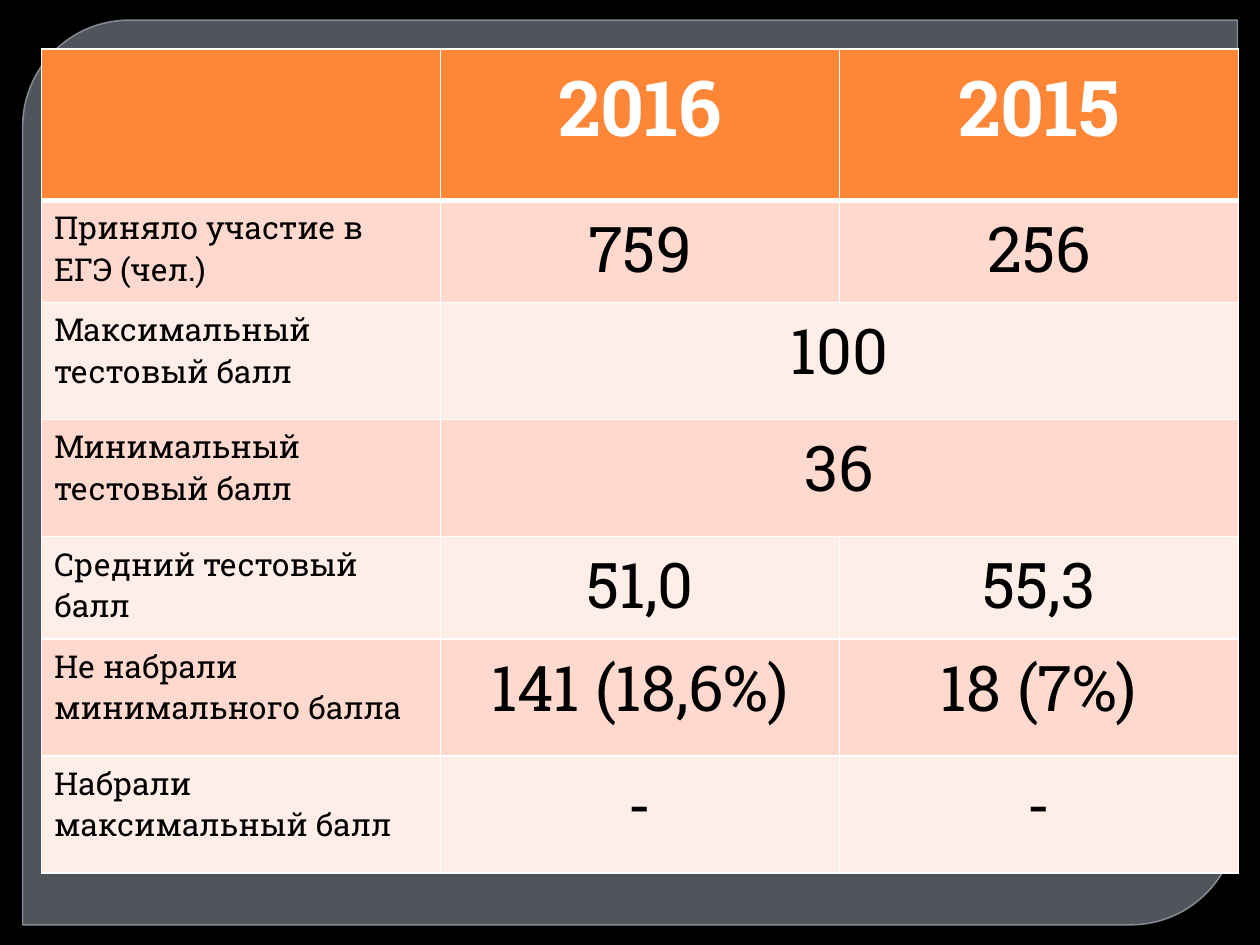
import pptx
import pptx.util
import pptx.dml.color
import pptx.enum.shapes
import pptx.enum.text
import pptx.oxml
import pptx.oxml.ns
from lxml import etree

Inches, Pt = pptx.util.Inches, pptx.util.Pt
RGBColor = pptx.dml.color.RGBColor
qn = pptx.oxml.ns.qn

# Content: label, then one value per year; a single value spans both years
HEADER = ("", "2016", "2015")
RESULTS = [
    ("Приняло участие в ЕГЭ (чел.)", "759", "256"),
    ("Максимальный тестовый балл", "100"),
    ("Минимальный тестовый балл", "36"),
    ("Средний тестовый балл", "51,0", "55,3"),
    ("Не набрали минимального балла", "141 (18,6%)", "18 (7%)"),
    ("Набрали максимальный балл", "-", "-"),
]
ROW_HEIGHTS = (1.2, 0.81, 0.93, 0.93, 0.81, 0.93, 0.93)
COLUMN_WIDTH = 9.5 / 3

FONT = "Roboto Slab"
BLACK = RGBColor(0x00, 0x00, 0x00)
WHITE = RGBColor(0xFF, 0xFF, 0xFF)
PANEL = RGBColor(0x7C, 0x82, 0x8D)
PANEL_LINE = RGBColor(0x90, 0x96, 0xA1)
ORANGE = RGBColor(0xFE, 0x86, 0x37)
BANDS = (RGBColor(0xFF, 0xED, 0xE8), RGBColor(0xFF, 0xD9, 0xCE))


def set_opacity(color_format, percent):
    """Add opacity to a colour that is already set on a fill or line."""
    color = color_format.find(".//" + qn("a:srgbClr"))
    etree.SubElement(color, qn("a:alpha"), val=str(percent * 1000))


def add_borders(cell, top=1, bottom=1):
    properties = cell._tc.get_or_add_tcPr()
    for side, width in (("L", 1), ("R", 1), ("T", top), ("B", bottom)):
        border = etree.SubElement(properties, qn(f"a:ln{side}"), w=str(Pt(width)))
        fill = etree.SubElement(border, qn("a:solidFill"))
        etree.SubElement(fill, qn("a:srgbClr"), val=str(WHITE))


def write(cell, text, size, color, bold, centred):
    cell.text = text
    para = cell.text_frame.paragraphs[0]
    if centred:
        para.alignment = pptx.enum.text.PP_ALIGN.CENTER
    para.font.name = FONT
    para.font.size = Pt(size)
    para.font.bold = bold
    para.font.color.rgb = color


def add_panel(page):
    panel = page.shapes.add_shape(
        pptx.enum.shapes.MSO_SHAPE.ROUND_2_DIAG_RECTANGLE,
        Inches(0.18), Inches(0.16), Inches(9.64), Inches(7.18))
    panel.adjustments[0] = 0.118
    panel.adjustments[1] = 0
    panel.shadow.inherit = False
    panel.fill.solid()
    panel.fill.fore_color.rgb = PANEL
    panel.line.color.rgb = PANEL_LINE
    panel.line.width = Pt(0.87)
    properties = panel._element.spPr
    set_opacity(properties.find(qn("a:solidFill")), 65)
    set_opacity(properties.find(qn("a:ln")), 88)


def add_results(page):
    rows = [HEADER] + RESULTS
    table = page.shapes.add_table(
        len(rows), len(HEADER), Inches(0.33), Inches(0.39),
        Inches(9.5), Inches(sum(ROW_HEIGHTS))).table
    for column in table.columns:
        column.width = Inches(COLUMN_WIDTH)

    for r, (texts, height) in enumerate(zip(rows, ROW_HEIGHTS)):
        table.rows[r].height = Inches(height)
        is_header = r == 0
        for c in range(len(HEADER)):
            cell = table.cell(r, c)
            # The rule under the header is thicker than the rest
            add_borders(cell, top=3 if r == 1 else 1, bottom=3 if is_header else 1)
            cell.fill.solid()
            cell.fill.fore_color.rgb = ORANGE if is_header else BANDS[r % 2]
            if c < len(texts):
                size = 44 if is_header else 36 if c else 18
                write(cell, texts[c], size, WHITE if is_header else BLACK,
                      bold=is_header, centred=c > 0)
        if len(texts) < len(HEADER):
            table.cell(r, 1).merge(table.cell(r, 2))


def main():
    deck = pptx.Presentation()
    deck.slide_width, deck.slide_height = Inches(10), Inches(7.5)
    page = deck.slides.add_slide(deck.slide_layouts[6])
    page.background.fill.solid()
    page.background.fill.fore_color.rgb = BLACK
    add_panel(page)
    add_results(page)
    deck.save("out.pptx")


if __name__ == "__main__":
    main()
